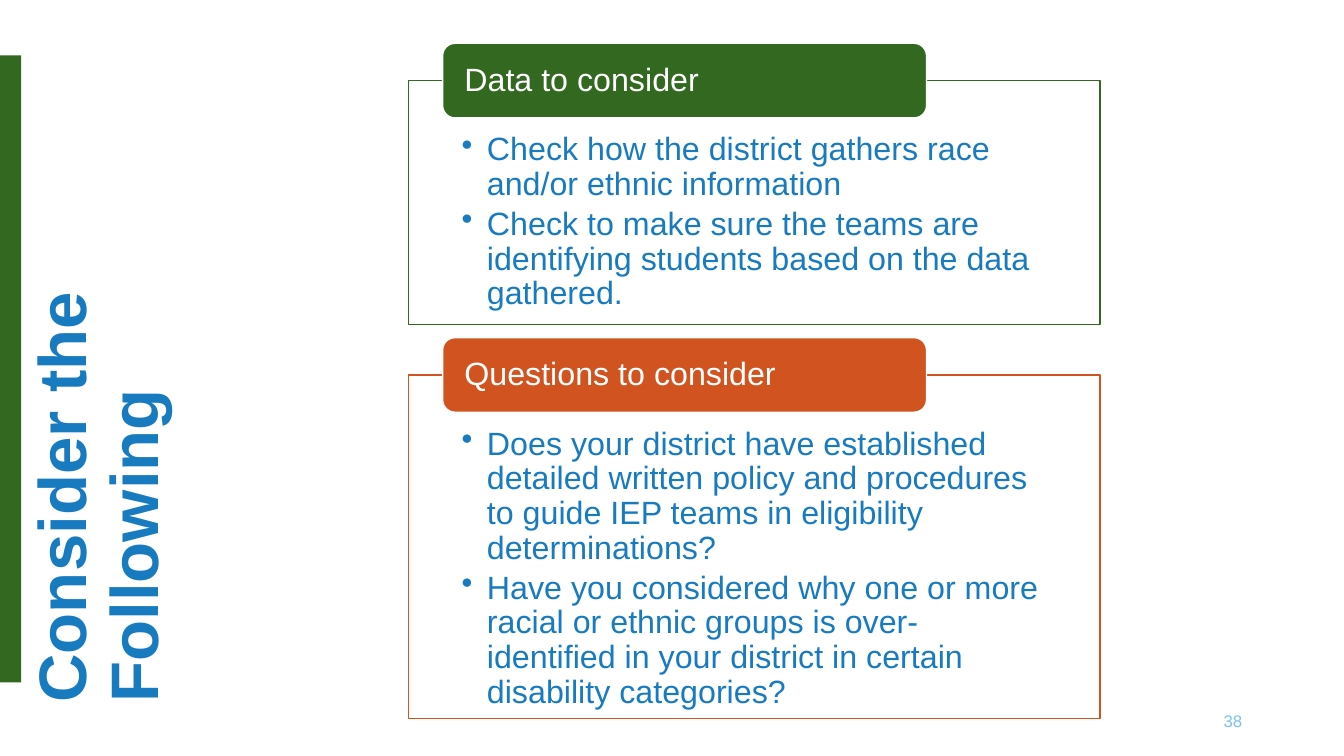
from dataclasses import dataclass

import pptx
import pptx.util
from lxml import etree
from pptx.dml.color import RGBColor
from pptx.enum.shapes import MSO_SHAPE
from pptx.enum.text import MSO_ANCHOR, MSO_AUTO_SIZE, PP_ALIGN
from pptx.oxml.ns import qn

EMU_PER_PX = 9144  # 100 px to the inch


@dataclass(frozen=True)
class Theme:
    font: str = "Arial"
    white: str = "FFFFFF"
    green: str = "326820"
    orange: str = "D15420"
    blue: str = "187BC0"
    pale_blue: str = "7CC0EF"
    title_size: int = 48
    body_size: int = 23
    number_size: int = 12
    line_width: int = 1


THEME = Theme()
PANELS = [
    {
        "heading": "Data to consider",
        "color": THEME.green,
        "top": 80,
        "height": 242,
        "points": [
            "Check how the district gathers race and/or ethnic information",
            "Check to make sure the teams are identifying students based on the data gathered.",
        ],
    },
    {
        "heading": "Questions to consider",
        "color": THEME.orange,
        "top": 372,
        "height": 341,
        "points": [
            "Does your district have established detailed written policy and procedures "
            "to guide IEP teams in eligibility determinations?",
            "Have you considered why one or more racial or ethnic groups is "
            "over-identified in your district in certain disability categories?",
        ],
    },
]


def px(length):
    return pptx.util.Emu(length * EMU_PER_PX)


def set_attributes(target, values):
    for name, value in values.items():
        setattr(target, name, value)


class SlideBuilder:
    def __init__(self, presentation, theme):
        self.theme = theme
        self.slide = presentation.slides.add_slide(presentation.slide_layouts[5])

    def fill_text(self, shape, texts, size, color, margins, bold=False, bullet=False,
                  anchor=MSO_ANCHOR.TOP, align=PP_ALIGN.LEFT, line_spacing=0.9):
        """Fill a shape with paragraphs; margins run left, top, right, bottom."""
        frame = shape.text_frame
        sides = ("margin_left", "margin_top", "margin_right", "margin_bottom")
        set_attributes(frame, dict(zip(sides, map(px, margins))))
        set_attributes(frame, {"word_wrap": True, "auto_size": MSO_AUTO_SIZE.NONE,
                               "vertical_anchor": anchor})
        for index, text in enumerate(texts):
            paragraph = frame.add_paragraph() if index else frame.paragraphs[0]
            if bullet:
                self.add_bullet(paragraph)
            set_attributes(paragraph, {"alignment": align, "line_spacing": line_spacing,
                                       "space_before": pptx.util.Pt(0),
                                       "space_after": pptx.util.Pt(3.5 if bullet else 0)})
            run = paragraph.add_run()
            run.text = text
            set_attributes(run.font, {"name": self.theme.font, "bold": bold,
                                      "size": pptx.util.Pt(size)})
            run.font.color.rgb = RGBColor.from_string(color)

    def add_bullet(self, paragraph):
        properties = paragraph._p.get_or_add_pPr()
        properties.set("marL", str(px(25)))
        properties.set("indent", str(px(-25)))
        etree.SubElement(properties, qn("a:buChar")).set("char", "•")

    def add_block(self, kind, box, fill, line=None, opacity=100):
        shape = self.slide.shapes.add_shape(kind, *map(px, box))
        shape.shadow.inherit = False
        shape.fill.solid()
        shape.fill.fore_color.rgb = RGBColor.from_string(fill)
        if opacity < 100:
            color = shape.element.spPr.find(qn("a:solidFill"))[0]
            etree.SubElement(color, qn("a:alpha")).set("val", str(opacity * 1000))
        if line:
            shape.line.color.rgb = RGBColor.from_string(line)
            shape.line.width = pptx.util.Pt(self.theme.line_width)
        else:
            shape.line.fill.background()
        return shape

    def add_title(self, text):
        title = self.slide.shapes.title
        set_attributes(title, {"left": px(-114), "top": px(241), "width": px(603),
                               "height": px(329), "rotation": 270})
        self.fill_text(title, [text], self.theme.title_size, self.theme.blue,
                       (10, 5, 10, 5), bold=True)

    def add_panel(self, heading, color, top, height, points):
        theme = self.theme
        frame = self.add_block(MSO_SHAPE.RECTANGLE, (405, top, 686, height),
                               theme.white, color, opacity=90)
        self.fill_text(frame, points, theme.body_size, theme.blue, (53, 52, 53, 18),
                       bullet=True)
        tab = self.add_block(MSO_SHAPE.ROUNDED_RECTANGLE, (439, top - 37, 480, 74),
                             color, theme.white)
        self.fill_text(tab, [heading], theme.body_size, theme.white, (18, 0, 18, 0),
                       anchor=MSO_ANCHOR.MIDDLE)

    def add_slide_number(self, number):
        box = self.slide.shapes.add_textbox(*map(px, (942, 695, 300, 40)))
        self.fill_text(box, [number], self.theme.number_size, self.theme.pale_blue,
                       (10, 5, 10, 5), anchor=MSO_ANCHOR.MIDDLE, align=PP_ALIGN.RIGHT,
                       line_spacing=1.0)


def main():
    presentation = pptx.Presentation()
    set_attributes(presentation, {"slide_width": px(1333), "slide_height": px(750)})
    builder = SlideBuilder(presentation, THEME)
    builder.add_block(MSO_SHAPE.RECTANGLE, (0, 55, 21, 622), THEME.green)
    builder.add_slide_number("38")
    builder.add_title("Consider the Following")
    for panel in PANELS:
        builder.add_panel(**panel)
    presentation.save("out.pptx")


if __name__ == "__main__":
    main()
